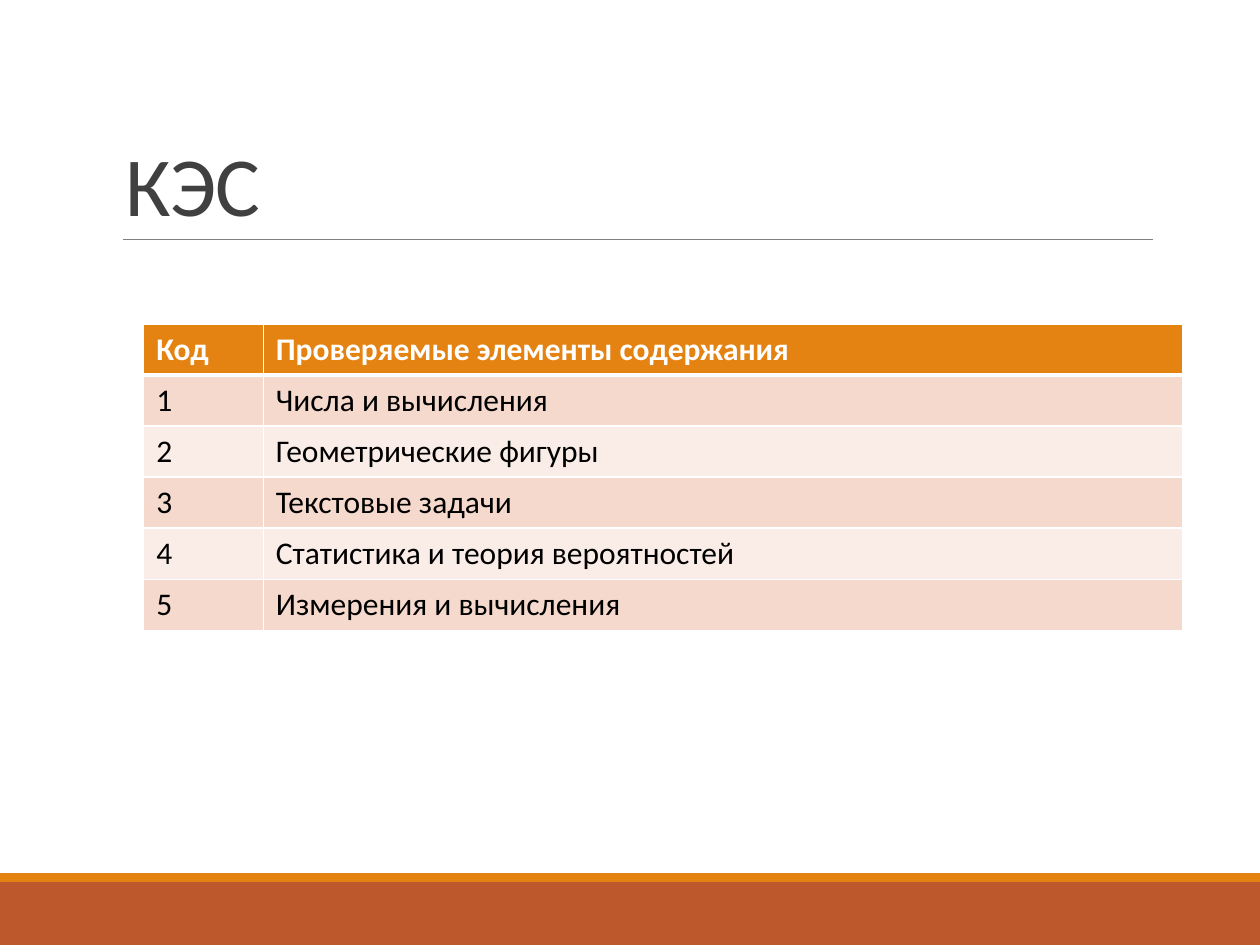
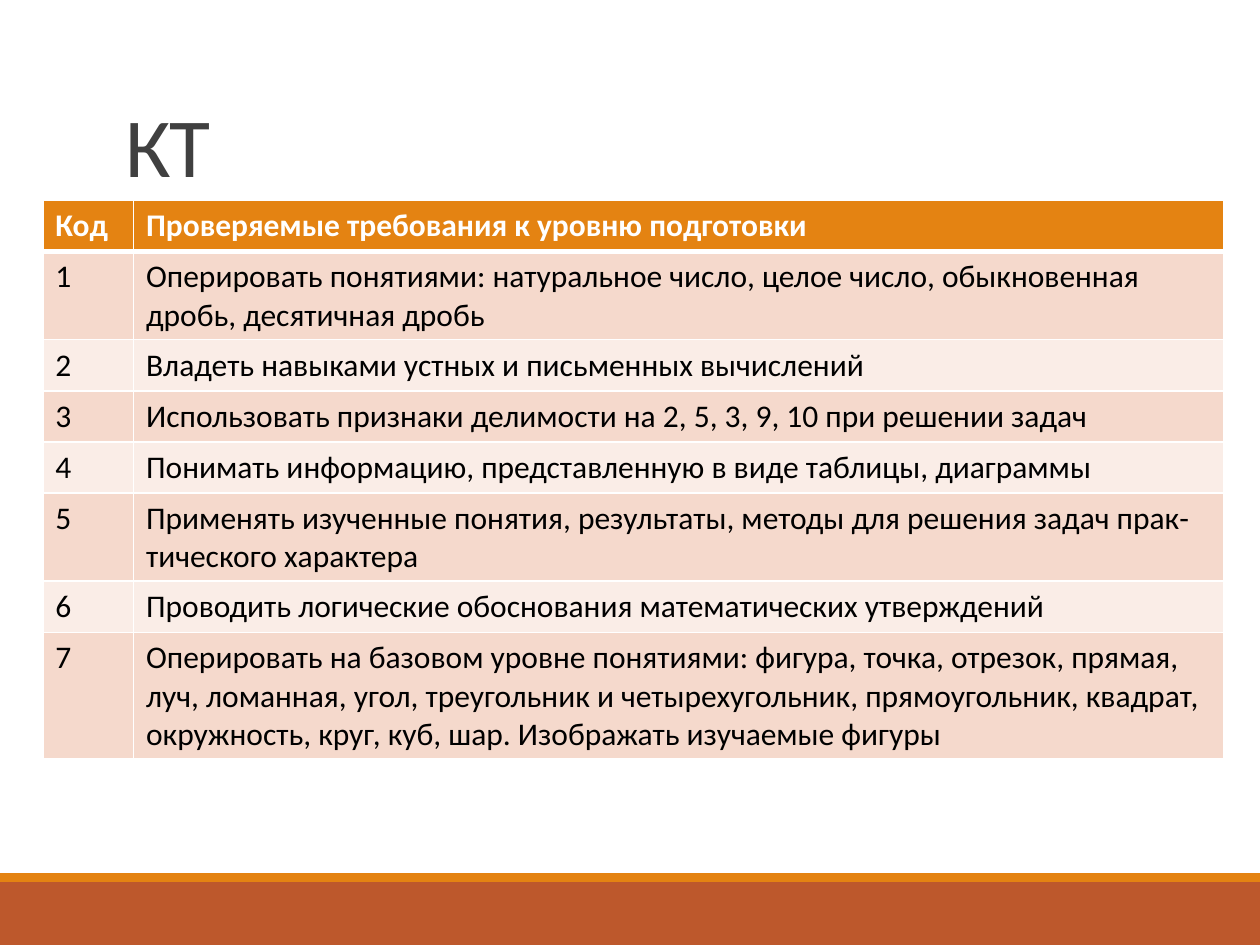
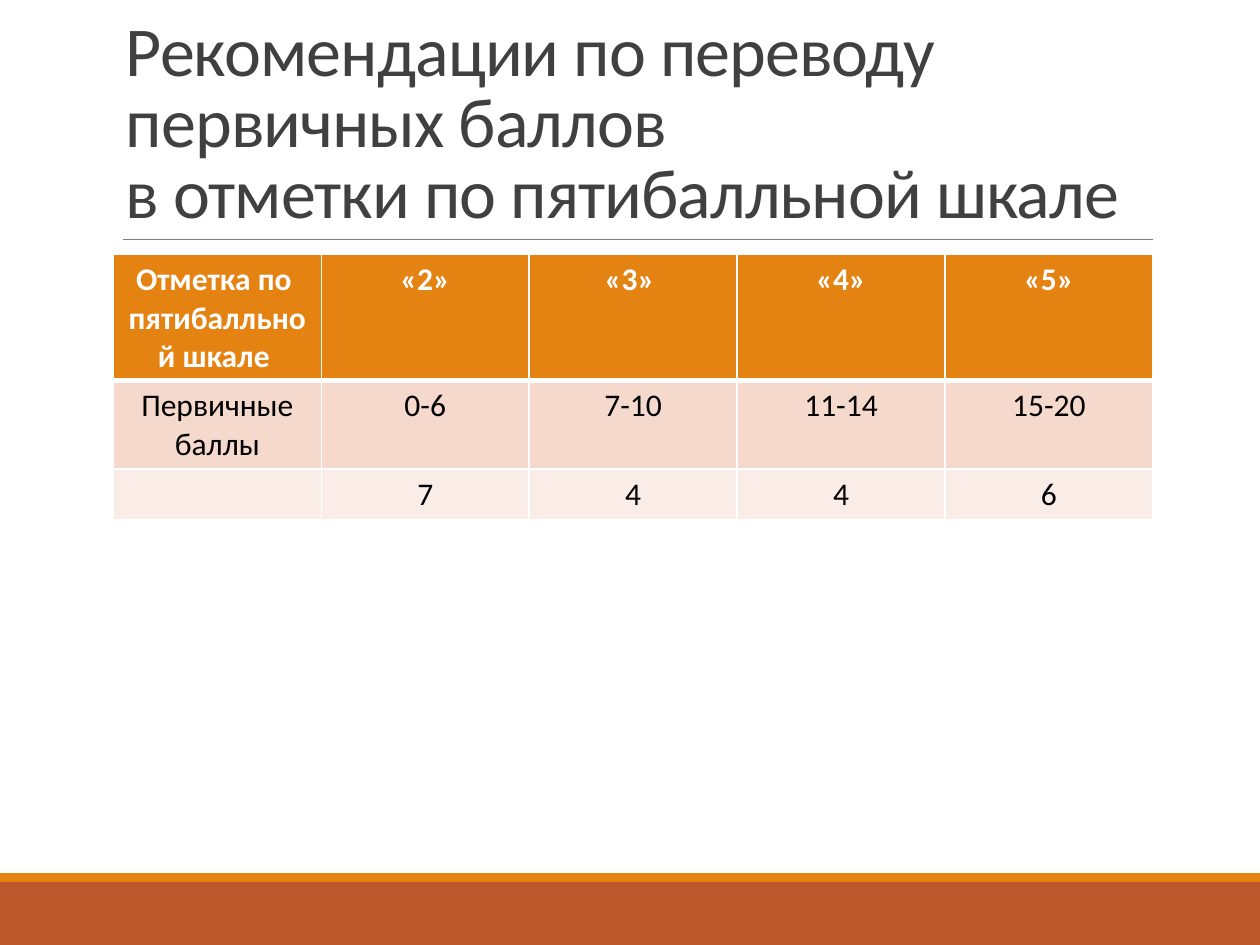
from dataclasses import dataclass

import pptx
import pptx.dml.color
import pptx.enum.shapes
import pptx.enum.text
import pptx.oxml
import pptx.oxml.ns
import pptx.presentation
import pptx.slide
import pptx.table
import pptx.text.text
import pptx.util
from lxml import etree

SLIDE_WIDTH = pptx.util.Inches(10)
SLIDE_HEIGHT = pptx.util.Inches(7.5)
GRID_COLUMNS = 100
GRID_ROWS = 75


@dataclass(frozen=True)
class Theme:
    font: str = "Calibri"
    title_color: str = "404040"
    rule_color: str = "808080"
    accent: str = "E48312"
    base: str = "BD582C"
    header_text: str = "FFFFFF"
    body_text: str = "000000"
    border: str = "FFFFFF"
    row_fills: tuple[str, str] = ("F5D9CC", "FAEDE7")
    title_size: int = 48
    long_title_size: int = 40
    table_size: int = 18
    title_tracking: int = -50
    title_line_spacing: float = 0.85
    rule_width: float = 0.5
    border_width: float = 1
    header_border_width: float = 3
    row_height: float = 29.2


THEME = Theme()


@dataclass(frozen=True)
class Area:
    column: float
    row: float
    columns: float
    rows: float

    def box(self) -> tuple[int, int, int, int]:
        return (
            grid_x(self.column),
            grid_y(self.row),
            grid_x(self.columns),
            grid_y(self.rows),
        )


@dataclass(frozen=True)
class Band:
    area: Area
    color: str


@dataclass(frozen=True)
class TitleBlock:
    text: str
    row: float = 3.1
    size: int = THEME.title_size


@dataclass(frozen=True)
class TableBlock:
    column: float
    row: float
    widths: tuple[float, ...]
    cells: tuple[tuple[str, ...], ...]
    centered: bool = False


@dataclass(frozen=True)
class Page:
    title: TitleBlock
    table: TableBlock


BANDS = (
    Band(Area(0, 70, GRID_COLUMNS, 5), THEME.base),
    Band(Area(0, 69.3, GRID_COLUMNS, 0.7), THEME.accent),
)
TITLE_COLUMN, TITLE_COLUMNS, TITLE_ROWS = 9, 82.5, 15.9
RULE_START, RULE_END, RULE_ROW = 9.8, 91.5, 19

PAGES = (
    Page(
        TitleBlock("КЭС"),
        TableBlock(
            11.4,
            25.7,
            (9.5, 73),
            (
                ("Код", "Проверяемые элементы содержания"),
                ("1", "Числа и вычисления"),
                ("2", "Геометрические фигуры"),
                ("3", "Текстовые задачи"),
                ("4", "Статистика и теория вероятностей"),
                ("5", "Измерения и вычисления"),
            ),
        ),
    ),
    Page(
        TitleBlock("КТ", row=0),
        TableBlock(
            3.4,
            15.9,
            (7.2, 86.5),
            (
                ("Код", "Проверяемые требования к уровню подготовки"),
                (
                    "1",
                    "Оперировать понятиями: натуральное число, целое число, обыкновенная\n"
                    "дробь, десятичная дробь",
                ),
                ("2", "Владеть навыками устных и письменных вычислений"),
                ("3", "Использовать признаки делимости на 2, 5, 3, 9, 10 при решении задач"),
                ("4", "Понимать информацию, представленную в виде таблицы, диаграммы"),
                (
                    "5",
                    "Применять изученные понятия, результаты, методы для решения задач прак-\n"
                    "тического характера",
                ),
                ("6", "Проводить логические обоснования математических утверждений"),
                (
                    "7",
                    "Оперировать на базовом уровне понятиями: фигура, точка, отрезок, прямая,\n"
                    "луч, ломанная, угол, треугольник и четырехугольник, прямоугольник, квадрат,\n"
                    "окружность, круг, куб, шар. Изображать изучаемые фигуры",
                ),
            ),
        ),
    ),
    Page(
        TitleBlock(
            "Рекомендации по переводу первичных баллов \nв отметки по пятибалльной шкале",
            size=THEME.long_title_size,
        ),
        TableBlock(
            9,
            20.2,
            (16.5,) * 5,
            (
                ("Отметка по \nпятибалльной шкале ", "«2»", "«3» ", "«4»", "«5»"),
                ("Первичные баллы", "0-6", "7-10", "11-14", "15-20"),
                ("", "7", "4", "4", "6"),
            ),
            centered=True,
        ),
    ),
)


def grid_x(columns: float) -> int:
    return round(SLIDE_WIDTH * columns / GRID_COLUMNS)


def grid_y(rows: float) -> int:
    return round(SLIDE_HEIGHT * rows / GRID_ROWS)


def rgb(color: str) -> pptx.dml.color.RGBColor:
    return pptx.dml.color.RGBColor.from_string(color)


def add_run(
    paragraph: pptx.text.text._Paragraph,
    text: str,
    size: float,
    color: str,
    bold: bool = False,
) -> pptx.text.text._Run:
    run = paragraph.add_run()
    run.text = text
    run.font.name = THEME.font
    run.font.size = pptx.util.Pt(size)
    run.font.bold = bold
    run.font.color.rgb = rgb(color)
    return run


def add_band(slide: pptx.slide.Slide, band: Band) -> None:
    shape = slide.shapes.add_shape(
        pptx.enum.shapes.MSO_SHAPE.RECTANGLE, *band.area.box()
    )
    shape.shadow.inherit = False
    shape.fill.solid()
    shape.fill.fore_color.rgb = rgb(band.color)
    shape.line.fill.background()


def add_rule(slide: pptx.slide.Slide) -> None:
    rule = slide.shapes.add_connector(
        pptx.enum.shapes.MSO_CONNECTOR.STRAIGHT,
        grid_x(RULE_START),
        grid_y(RULE_ROW),
        grid_x(RULE_END),
        grid_y(RULE_ROW),
    )
    rule.line.color.rgb = rgb(THEME.rule_color)
    rule.line.width = pptx.util.Pt(THEME.rule_width)
    etree.SubElement(rule._element.spPr, pptx.oxml.ns.qn("a:effectLst"))


def add_title(slide: pptx.slide.Slide, title: TitleBlock) -> None:
    area = Area(TITLE_COLUMN, title.row, TITLE_COLUMNS, TITLE_ROWS)
    text_frame = slide.shapes.add_textbox(*area.box()).text_frame
    text_frame.word_wrap = True
    text_frame.vertical_anchor = pptx.enum.text.MSO_ANCHOR.BOTTOM
    paragraph = text_frame.paragraphs[0]
    paragraph.line_spacing = THEME.title_line_spacing
    for index, line in enumerate(title.text.split("\n")):
        if index:
            paragraph.add_line_break()
        run = add_run(paragraph, line, title.size, THEME.title_color)
        run.font._element.set("spc", str(THEME.title_tracking))


def set_borders(cell: pptx.table._Cell, top: float, bottom: float) -> None:
    side = THEME.border_width
    widths = {"lnL": side, "lnR": side, "lnT": top, "lnB": bottom}
    properties = cell._tc.get_or_add_tcPr()
    for index, (tag, width) in enumerate(widths.items()):
        border = pptx.oxml.parse_xml(
            f'<a:{tag} {pptx.oxml.ns.nsdecls("a")} w="{pptx.util.Pt(width)}">'
            f'<a:solidFill><a:srgbClr val="{THEME.border}"/></a:solidFill></a:{tag}>'
        )
        properties.insert(index, border)


def fill_cell(
    cell: pptx.table._Cell, text: str, row_index: int, centered: bool
) -> None:
    header = row_index == 0
    cell.fill.solid()
    cell.fill.fore_color.rgb = rgb(
        THEME.accent if header else THEME.row_fills[(row_index - 1) % 2]
    )
    set_borders(
        cell,
        THEME.header_border_width if row_index == 1 else THEME.border_width,
        THEME.header_border_width if header else THEME.border_width,
    )
    color = THEME.header_text if header else THEME.body_text
    for index, line in enumerate(text.split("\n")):
        text_frame = cell.text_frame
        paragraph = text_frame.add_paragraph() if index else text_frame.paragraphs[0]
        if centered:
            paragraph.alignment = pptx.enum.text.PP_ALIGN.CENTER
        if line:
            add_run(paragraph, line, THEME.table_size, color, header)


def add_table(slide: pptx.slide.Slide, block: TableBlock) -> None:
    row_height = pptx.util.Pt(THEME.row_height)
    table = slide.shapes.add_table(
        len(block.cells),
        len(block.widths),
        grid_x(block.column),
        grid_y(block.row),
        grid_x(sum(block.widths)),
        row_height * len(block.cells),
    ).table
    for column, width in zip(table.columns, block.widths):
        column.width = grid_x(width)
    for row_index, texts in enumerate(block.cells):
        for column_index, text in enumerate(texts):
            fill_cell(
                table.cell(row_index, column_index), text, row_index, block.centered
            )


def add_page(presentation: pptx.presentation.Presentation, page: Page) -> None:
    slide = presentation.slides.add_slide(presentation.slide_layouts[6])
    for band in BANDS:
        add_band(slide, band)
    add_rule(slide)
    add_title(slide, page.title)
    add_table(slide, page.table)


def main() -> None:
    presentation = pptx.Presentation()
    presentation.slide_width = SLIDE_WIDTH
    presentation.slide_height = SLIDE_HEIGHT
    for page in PAGES:
        add_page(presentation, page)
    presentation.save("out.pptx")


if __name__ == "__main__":
    main()
